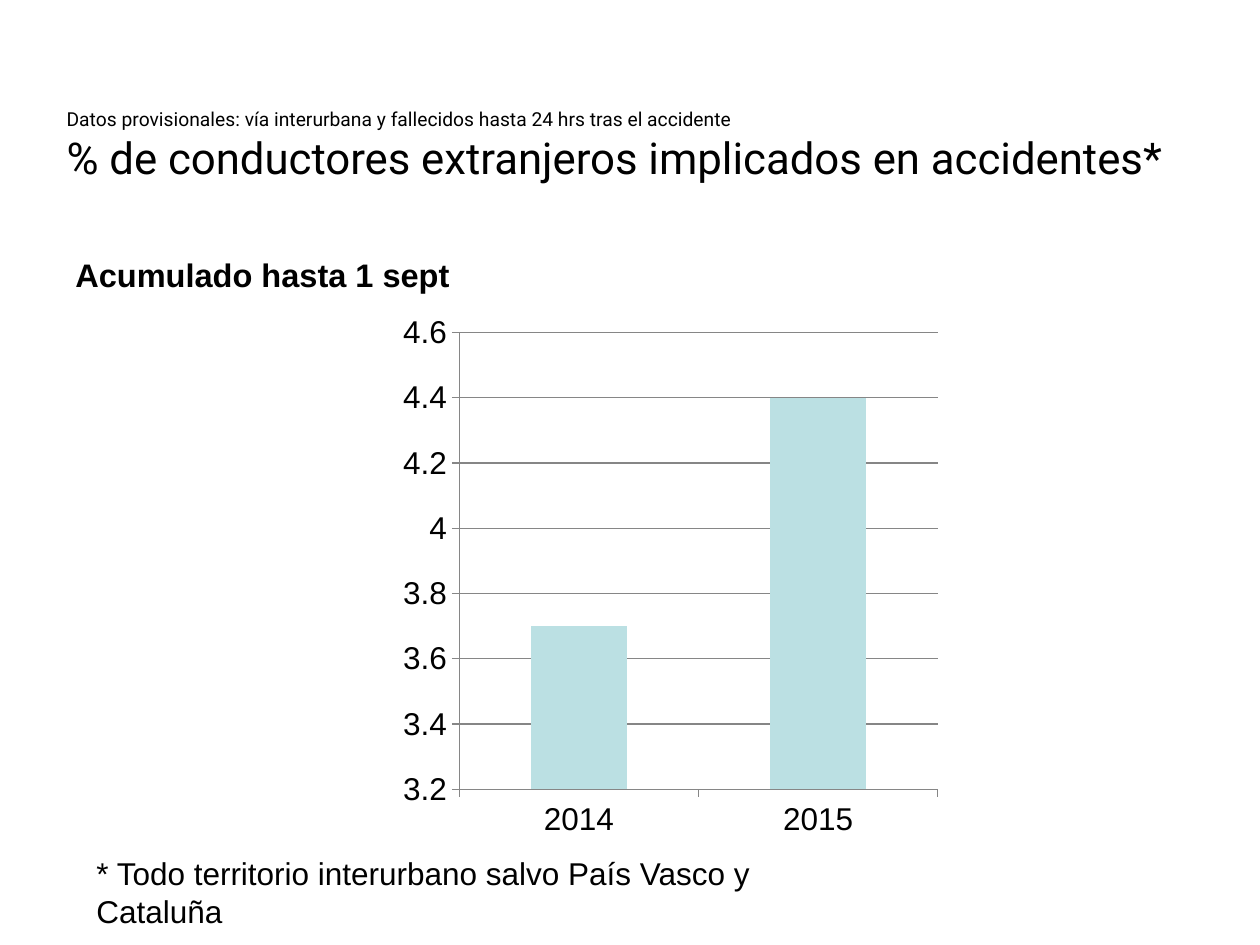
"""Build the slide on foreign drivers involved in accidents."""
from dataclasses import dataclass

from pptx import Presentation
from pptx import util as u
from pptx.chart.data import CategoryChartData
from pptx.dml.color import RGBColor
from pptx.enum import chart as ch
from pptx.enum import text as t

SCALE = 914400 / 126


@dataclass(frozen=True)
class Theme:
    ink: RGBColor = RGBColor(0x00, 0x00, 0x00)
    bar: RGBColor = RGBColor(0xBB, 0xE0, 0xE3)
    rule: RGBColor = RGBColor(0x86, 0x86, 0x86)
    title_font: str = "Roboto"
    body_font: str = "Arial"
    kicker: float = 11
    title: float = 25
    heading: float = 18.6
    body: float = 18


THEME = Theme()


def px(*lengths):
    return [u.Emu(round(length * SCALE)) for length in lengths]


def apply(target, **values):
    for name, value in values.items():
        setattr(target, name, value)


def style_font(font, name, size, bold=False):
    apply(font, name=name, size=u.Pt(size), bold=bold)
    font.color.rgb = THEME.ink


def add_span(para, wording, name, size, bold=False):
    span = para.add_run()
    span.text = wording
    style_font(span.font, name, size, bold)


def format_frame(box, anchor):
    apply(box.text_frame, word_wrap=True, vertical_anchor=anchor,
          auto_size=t.MSO_AUTO_SIZE.NONE)
    para = box.text_frame.paragraphs[0]
    para.alignment = t.PP_ALIGN.LEFT
    return para


def fill_title(page, kicker, headline):
    title = page.shapes.title
    left, top, width, height = px(54, 66, 1134, 158)
    apply(title, left=left, top=top, width=width, height=height)
    para = format_frame(title, t.MSO_ANCHOR.MIDDLE)
    add_span(para, kicker, THEME.title_font, THEME.kicker)
    para.add_line_break()
    add_span(para, headline, THEME.title_font, THEME.title)


def add_label(page, frame, wording, size, anchor, bold=False):
    box = page.shapes.add_textbox(*px(*frame))
    para = format_frame(box, anchor)
    add_span(para, wording, THEME.body_font, size, bold)


def add_column_chart(page, frame, years, shares):
    data = CategoryChartData()
    data.categories = years
    data.add_series("Series 1", shares)
    chart = page.shapes.add_chart(
        ch.XL_CHART_TYPE.COLUMN_STACKED, *px(*frame), data).chart
    apply(chart, has_legend=False, has_title=False)
    style_font(chart.font, THEME.body_font, THEME.body)
    plot = chart.plots[0]
    apply(plot, gap_width=150, overlap=100, vary_by_categories=False)
    fill = plot.series[0].format.fill
    fill.solid()
    fill.fore_color.rgb = THEME.bar
    apply(chart.value_axis, minimum_scale=3.2, maximum_scale=4.6,
          major_unit=0.2, has_major_gridlines=True)
    for axis in (chart.category_axis, chart.value_axis):
        apply(axis, major_tick_mark=ch.XL_TICK_MARK.OUTSIDE,
              minor_tick_mark=ch.XL_TICK_MARK.NONE)
        axis.format.line.color.rgb = THEME.rule
    chart.value_axis.major_gridlines.format.line.color.rgb = THEME.rule


def main():
    deck = Presentation()
    deck.slide_width, deck.slide_height = px(1260, 945)
    page = deck.slides.add_slide(deck.slide_layouts[5])
    fill_title(
        page,
        "Datos provisionales: vía interurbana y fallecidos hasta 24 hrs tras el accidente",
        "% de conductores extranjeros implicados en accidentes*")
    add_label(page, (63, 255, 449, 45), "Acumulado hasta 1 sept",
              THEME.heading, t.MSO_ANCHOR.BOTTOM, bold=True)
    add_column_chart(page, (392, 304, 557, 544), ("2014", "2015"), (3.7, 4.4))
    add_label(page, (84, 848, 762, 50),
              "* Todo territorio interurbano salvo País Vasco y Cataluña",
              THEME.body, t.MSO_ANCHOR.TOP)
    deck.save("out.pptx")


if __name__ == "__main__":
    main()
